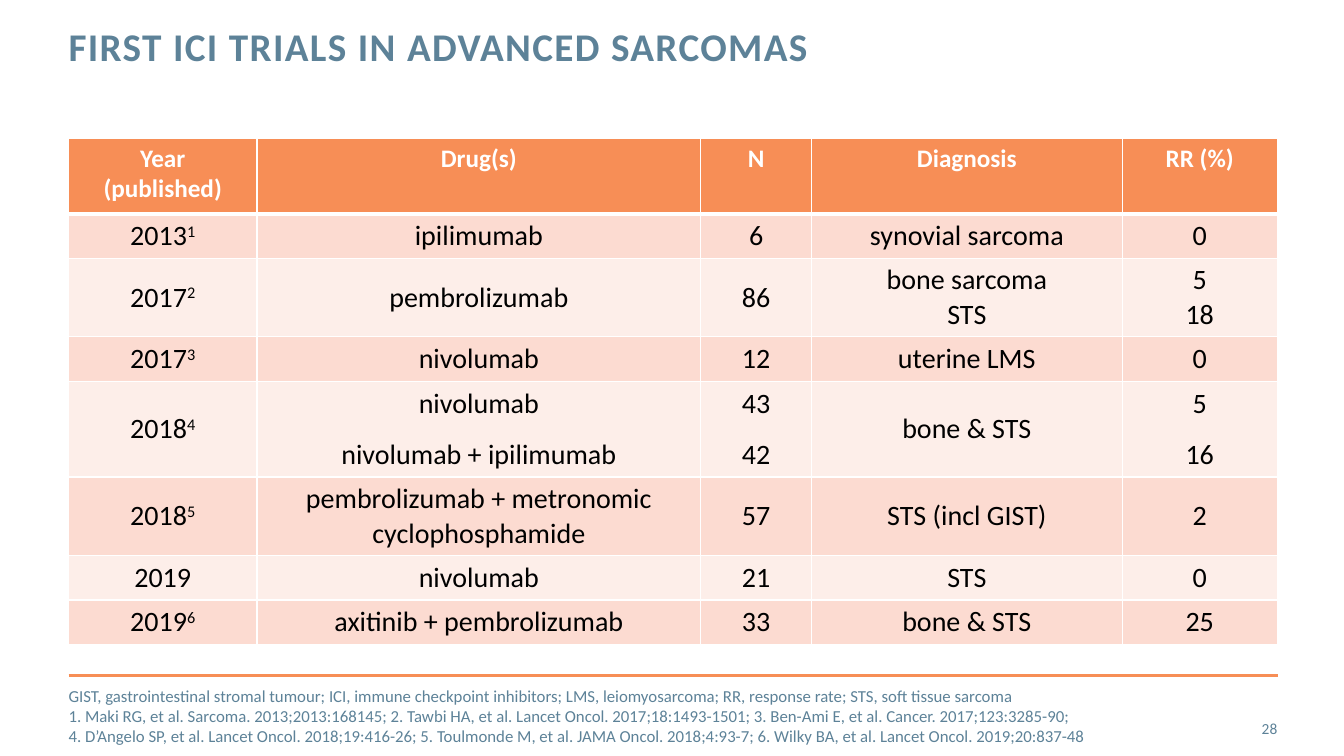
"""Build the slide on first ICI trials in advanced sarcomas."""
from dataclasses import dataclass

from lxml.etree import SubElement
from pptx import Presentation
from pptx.dml.color import RGBColor
from pptx.enum.shapes import MSO_CONNECTOR
from pptx.enum.text import MSO_ANCHOR, MSO_AUTO_SIZE, PP_ALIGN
from pptx.oxml.ns import qn
from pptx.util import Inches, Pt


@dataclass(frozen=True)
class Theme:
    font: str = "Calibri"
    slate: str = "5D8298"
    orange: str = "F78E56"
    peach: str = "FCDBD1"
    pale: str = "FDEEE9"
    white: str = "FFFFFF"
    black: str = "000000"
    title: int = 28
    head: int = 18
    body: int = 20
    note: int = 12
    page: int = 11


theme = Theme()


def style(frame, size, color, align=PP_ALIGN.LEFT, bold=False):
    """Format every run in a text frame."""
    for para in frame.paragraphs:
        para.alignment = align
        for run in para.runs:
            font = run.font
            font.name, font.size, font.bold = theme.font, Pt(size), bold
            font.color.rgb = RGBColor.from_string(color)


def setup(frame, anchor):
    """Clear the margins of a text frame and anchor its text."""
    frame.margin_left = frame.margin_right = 0
    frame.margin_top = frame.margin_bottom = 0
    frame.word_wrap = True
    frame.auto_size = MSO_AUTO_SIZE.NONE
    frame.vertical_anchor = anchor


deck = Presentation()
deck.slide_width, deck.slide_height = Inches(13.33), Inches(7.5)
slide = deck.slides.add_slide(deck.slide_layouts[5])
shapes = slide.shapes
left = Inches(0.68)

title = shapes.title
title.left, title.top = left, Inches(0.27)
title.width, title.height = Inches(9.56), Inches(0.88)
frame = title.text_frame
frame.text = "FIRST ICI TRIALS IN ADVANCED SARCOMAS"
setup(frame, MSO_ANCHOR.TOP)
style(frame, theme.title, theme.slate, bold=True)
frame.paragraphs[0].line_spacing = Pt(30)
frame.paragraphs[0].runs[0]._r.get_or_add_rPr().set("spc", "100")

rule = shapes.add_connector(
    MSO_CONNECTOR.STRAIGHT, left, Inches(6.7), Inches(12.68), Inches(6.7))
rule.line.color.rgb = RGBColor.from_string(theme.orange)
rule.line.width = Pt(2)
SubElement(rule._element.spPr, qn("a:effectLst"))

trials = [
    ("Year\n(published)", "Drug(s)", "N", "Diagnosis", "RR (%)"),
    ("2013^1", "ipilimumab", "6", "synovial sarcoma", "0"),
    ("2017^2", "pembrolizumab", "86", "bone sarcoma\nSTS", "5\n18"),
    ("2017^3", "nivolumab", "12", "uterine LMS", "0"),
    ("2018^4", "nivolumab\nnivolumab + ipilimumab", "43\n42", "bone & STS",
     "5\n16"),
    ("2018^5", "pembrolizumab + metronomic cyclophosphamide", "57",
     "STS (incl GIST)", "2"),
    ("2019", "nivolumab", "21", "STS", "0"),
    ("2019^6", "axitinib + pembrolizumab", "33", "bone & STS", "25"),
]
widths = [1.87, 4.4, 1.1, 3.08, 1.54]
heights = [0.75, 0.44, 0.78, 0.44, 0.95, 0.78, 0.44, 0.44]
paired = 4
table = shapes.add_table(
    len(trials), len(widths), left, Inches(1.37),
    Inches(sum(widths)), Inches(sum(heights))).table
for col, width in zip(table.columns, widths):
    col.width = Inches(width)
for row, height in zip(table.rows, heights):
    row.height = Inches(height)

for i, trial in enumerate(trials):
    header = i == 0
    for j, entry in enumerate(trial):
        cell = table.cell(i, j)
        text, _, ref = entry.partition("^")
        frame = cell.text_frame
        frame.text = text
        if ref:
            run = frame.paragraphs[0].add_run()
            run.text = ref
            run._r.get_or_add_rPr().set("baseline", "30000")
        if i == paired:
            for para in frame.paragraphs[1:]:
                para.space_before = Pt(12)
        cell.margin_left = cell.margin_right = Inches(0.11)
        cell.margin_top = cell.margin_bottom = Inches(0.05)
        props = cell._tc.get_or_add_tcPr()
        for side in "LRTB":
            thick = (i, side) in [(0, "B"), (1, "T")]
            edge = SubElement(
                props, qn("a:ln" + side), w=str(Pt(3 if thick else 1)))
            fill = SubElement(edge, qn("a:solidFill"))
            SubElement(fill, qn("a:srgbClr"), val=theme.white)
        if header:
            cell.vertical_anchor = MSO_ANCHOR.TOP
            style(frame, theme.head, theme.white, PP_ALIGN.CENTER, True)
            shade = theme.orange
        else:
            cell.vertical_anchor = MSO_ANCHOR.MIDDLE
            style(frame, theme.body, theme.black, PP_ALIGN.CENTER)
            shade = theme.peach if i % 2 else theme.pale
        cell.fill.solid()
        cell.fill.fore_color.rgb = RGBColor.from_string(shade)

notes = "\n".join([
    "GIST, gastrointestinal stromal tumour; ICI, immune checkpoint inhibitors; "
    "LMS, leiomyosarcoma; RR, response rate; STS, soft tissue sarcoma",
    "1. Maki RG, et al. Sarcoma. 2013;2013:168145; "
    "2. Tawbi HA, et al. Lancet Oncol. 2017;18:1493-1501; "
    "3. Ben-Ami E, et al. Cancer. 2017;123:3285-90;",
    "4. D’Angelo SP, et al. Lancet Oncol. 2018;19:416-26; "
    "5. Toulmonde M, et al. JAMA Oncol. 2018;4:93-7; "
    "6. Wilky BA, et al. Lancet Oncol. 2019;20:837-48",
])
for text, x, y, width, size, align in [
    (notes, 0.68, 6.9, 11.66, theme.note, PP_ALIGN.LEFT),
    ("28", 11.81, 7.03, 0.86, theme.page, PP_ALIGN.RIGHT),
]:
    box = shapes.add_textbox(Inches(x), Inches(y), Inches(width), Inches(0.4))
    frame = box.text_frame
    frame.text = text
    setup(frame, MSO_ANCHOR.MIDDLE)
    style(frame, size, theme.slate, align)

deck.save("out.pptx")
